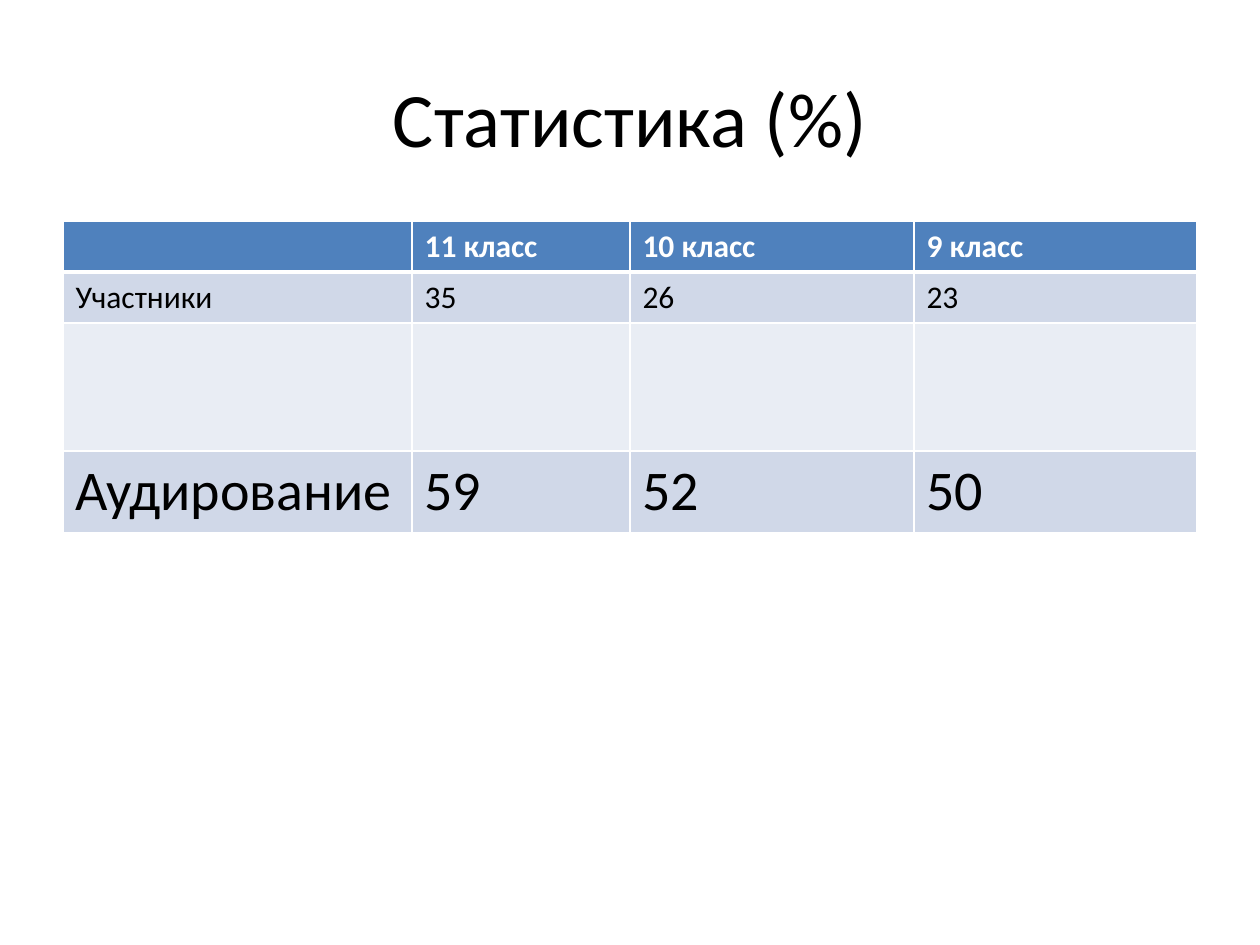
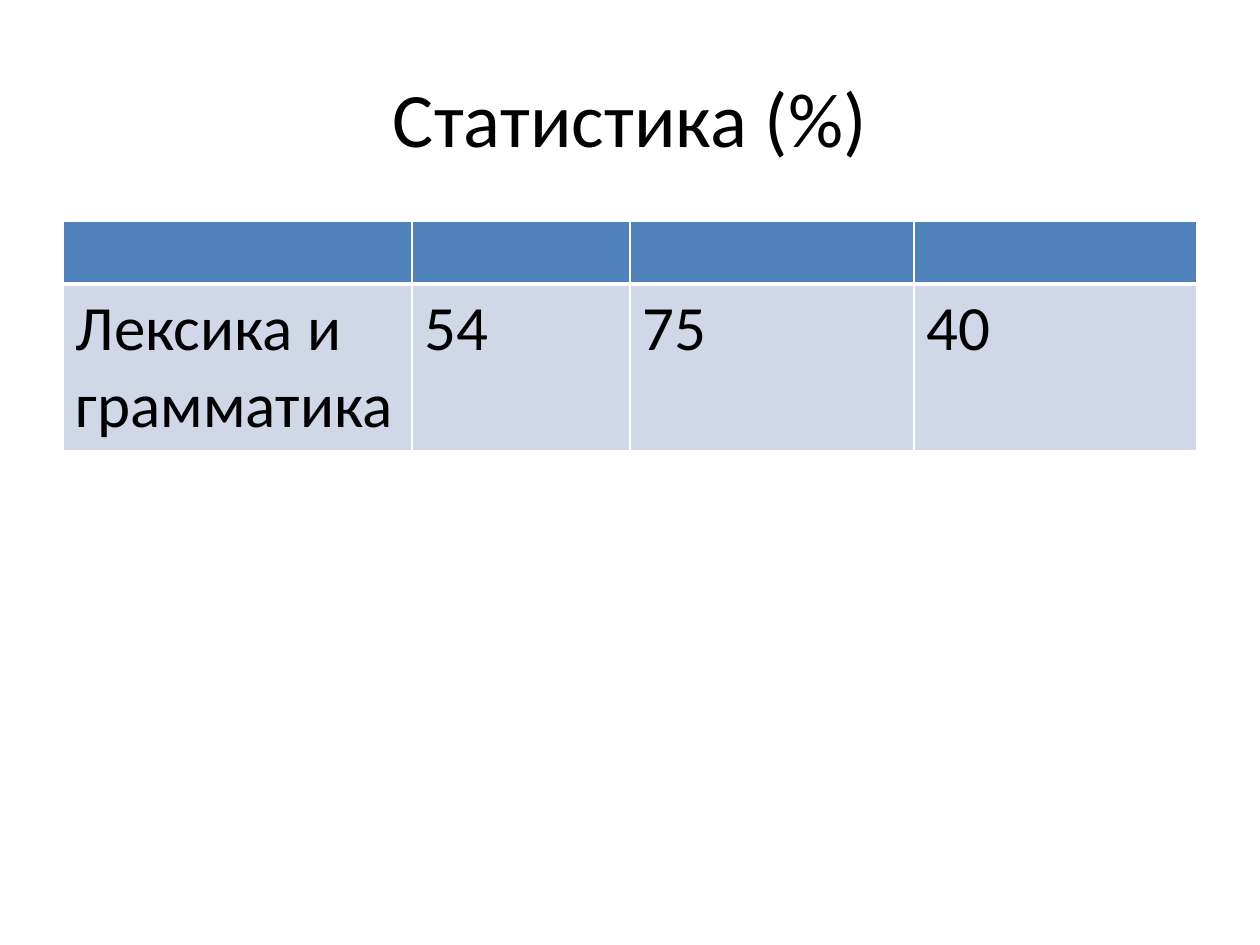
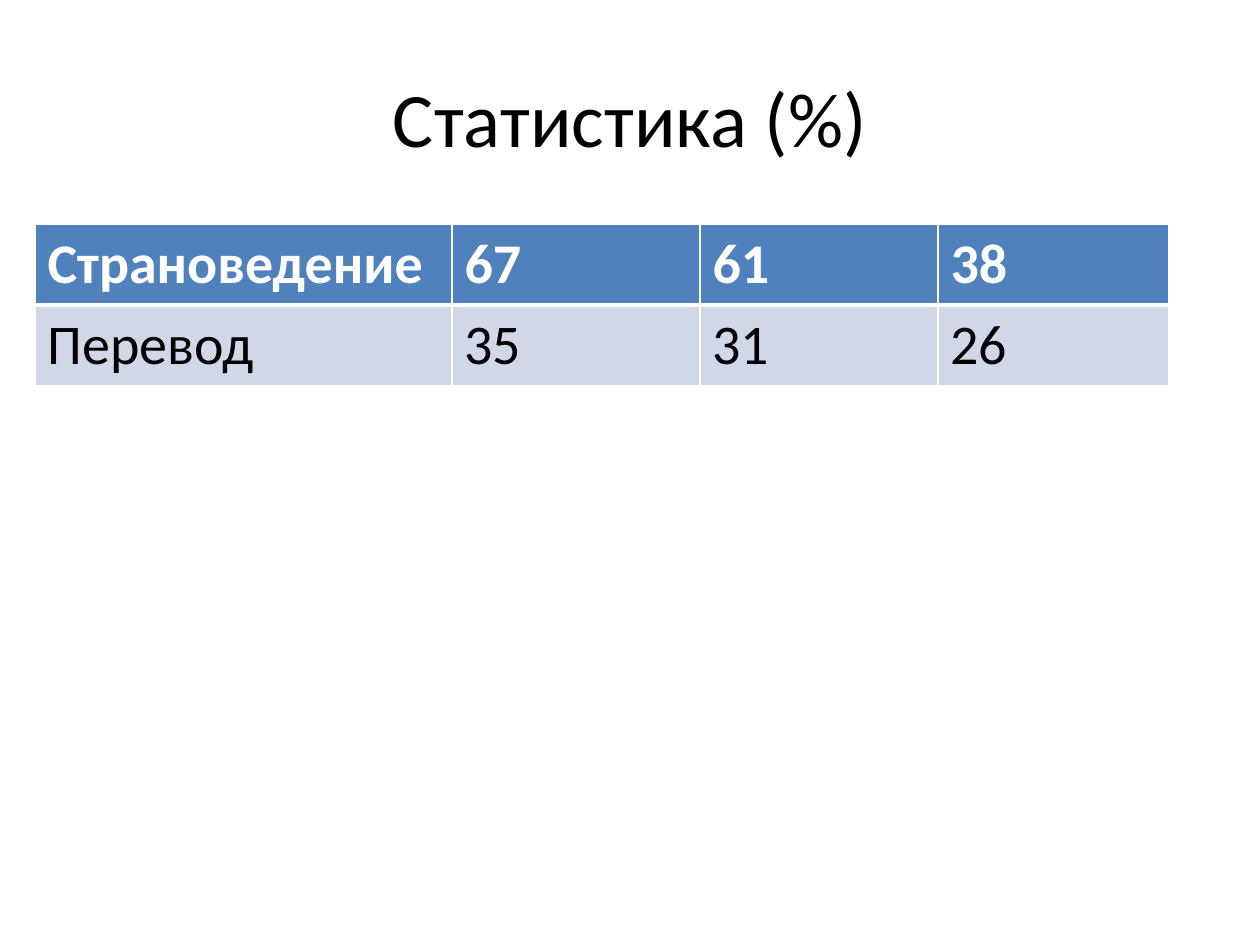
from lxml.etree import SubElement
from pptx import Presentation
from pptx.dml.color import RGBColor
from pptx.enum.text import MSO_ANCHOR, PP_ALIGN
from pptx.oxml.ns import qn
from pptx.util import Emu, Pt

FONT = "Calibri"
TITLE = "Статистика (%)"
WHITE, BLACK = "FFFFFF", "000000"
HEADER_FILL = "4F81BD"
BAND_FILLS = ["D0D8E8", "E9EDF4"]
BLANK = [""] * 4


def px(count):
    """Convert pixels, 126 to the inch, to EMU."""
    return Emu(round(count * 914400 / 126))


def style_font(font, size, color, bold=False):
    font.name = FONT
    font.size = Pt(size)
    font.bold = bold
    font.color.rgb = RGBColor.from_string(color)


# Each row: height in px, text size in points, cell texts
statistics = [
    {
        "left": 63, "top": 221, "columns": [349, 218, 284, 283],
        "rows": [
            (51, 18, ["", "11 класс", "10 класс", "9 класс"]),
            (51, 18, ["Участники", "35", "26", "23"]),
            (128, 18, BLANK),
            (81, 32, ["Аудирование", "59", "52", "50"]),
        ],
    },
    {
        "left": 63, "top": 221, "columns": [349, 218, 284, 283],
        "rows": [
            (63, 18, BLANK),
            (166, 36, ["Лексика и грамматика", "54", "75", "40"]),
        ],
    },
    {
        "left": 35, "top": 224, "columns": [417, 248, 238, 231],
        "rows": [
            (81, 32, ["Страноведение", "67", "61", "38"]),
            (81, 32, ["Перевод", "35", "31", "26"]),
        ],
    },
]

presentation = Presentation()
presentation.slide_width, presentation.slide_height = px(1260), px(945)
title_only = presentation.slide_layouts[5]

for section in statistics:
    slide = presentation.slides.add_slide(title_only)

    title = slide.shapes.title
    title.left, title.top, title.width, title.height = px(63), px(38), px(1134), px(158)
    title.text_frame.text = TITLE
    title.text_frame.vertical_anchor = MSO_ANCHOR.MIDDLE
    heading = title.text_frame.paragraphs[0]
    heading.alignment = PP_ALIGN.CENTER
    style_font(heading.font, 44, BLACK)

    columns, rows = section["columns"], section["rows"]
    results = slide.shapes.add_table(
        len(rows), len(columns), px(section["left"]), px(section["top"]),
        px(sum(columns)), px(sum(height for height, _, _ in rows)),
    ).table
    for column, width in zip(results.columns, columns):
        column.width = px(width)

    for row_index, (height, size, texts) in enumerate(rows):
        results.rows[row_index].height = px(height)
        is_header = row_index == 0
        fill = HEADER_FILL if is_header else BAND_FILLS[(row_index - 1) % 2]
        # The header is set off from the first data row by a thicker rule
        borders = {
            "a:lnL": 1,
            "a:lnR": 1,
            "a:lnT": 3 if row_index == 1 else 1,
            "a:lnB": 3 if is_header else 1,
        }
        for column_index, text in enumerate(texts):
            cell = results.cell(row_index, column_index)
            properties = cell._tc.get_or_add_tcPr()
            for edge, points in borders.items():
                line = SubElement(properties, qn(edge), w=str(Pt(points)))
                SubElement(SubElement(line, qn("a:solidFill")), qn("a:srgbClr"), val=WHITE)
            cell.fill.solid()
            cell.fill.fore_color.rgb = RGBColor.from_string(fill)
            if text:
                cell.text = text
                style_font(cell.text_frame.paragraphs[0].font, size,
                           WHITE if is_header else BLACK, bold=is_header)

presentation.save("out.pptx")
